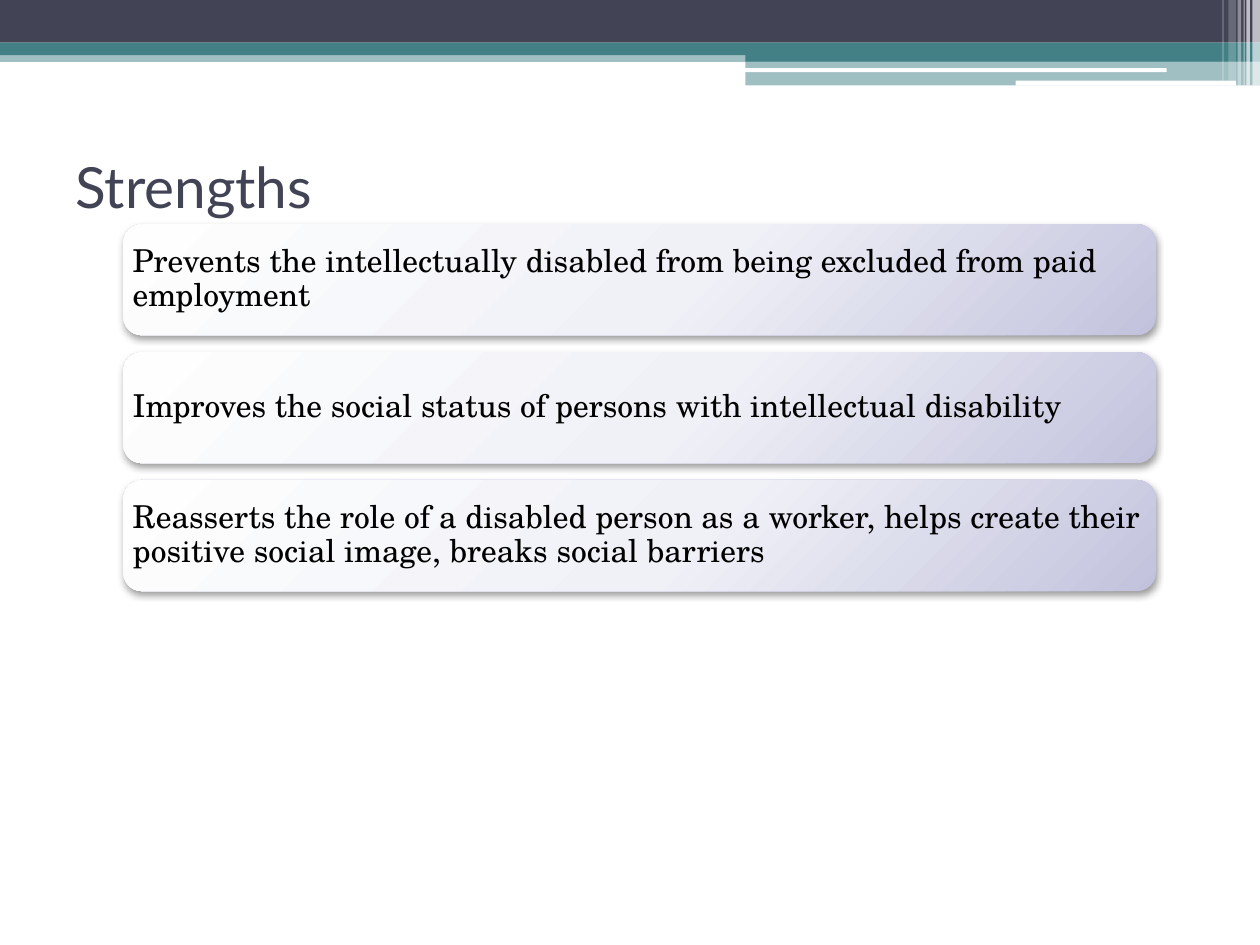
from pptx import Presentation
from pptx.dml.color import RGBColor
from pptx.enum.shapes import MSO_SHAPE
from pptx.enum.text import MSO_ANCHOR, PP_ALIGN
from pptx.oxml import parse_xml
from pptx.oxml.ns import nsdecls, qn
from pptx.util import Pt

COLORS = {
    "navy": "424456",
    "teal": "438086",
    "white": "FFFFFF",
    "black": "000000",
    "card_light": "FEFEFE",
    "card_middle": "F0F1F7",
    "card_dark": "C2C2DD",
}

# Header bands: left, top, width, height, colour, opacity in percent
BANDS = [
    (0, 28.8, 720, 6.6, "teal", 50),
    (0, 0, 720, 24.4, "navy", 100),
    (0, 24.4, 720, 7.2, "teal", 100),
    (426, 28, 294, 7.2, "teal", 100),
    (426, 35.2, 294, 13.6, "teal", 50),
]
# White rounded rules: left, top, width, height
RULES = [(425.5, 39, 241.2, 2.2), (580.3, 46.1, 126, 2.9)]
# White stripes at the right edge: left, width, height, opacity
STRIPES = [
    (715.7, 4.3, 49, 65),
    (712.2, 2, 49, 65),
    (710.6, 0.7, 49, 60),
    (707.2, 2, 49, 40),
    (702, 4.3, 46.1, 20),
    (698.5, 0.7, 46.1, 30),
]

STRENGTHS = [
    "Prevents the intellectually disabled from being excluded from paid employment",
    "Improves the social status of persons with intellectual disability",
    "Reasserts the role of a disabled person as a worker, helps create their "
    "positive social image, breaks social barriers",
]
CARD_LEFT, CARD_TOP, CARD_WIDTH, CARD_HEIGHT = 70.5, 128.1, 590, 63.5
CARD_PITCH = 73.1


def add_block(page, left, top, width, height, color, opacity=100,
              kind=MSO_SHAPE.RECTANGLE):
    block = page.shapes.add_shape(kind, Pt(left), Pt(top), Pt(width), Pt(height))
    block.shadow.inherit = False
    block.line.fill.background()
    block.fill.solid()
    block.fill.fore_color.rgb = RGBColor.from_string(COLORS[color])
    if opacity < 100:
        tint = block.element.spPr.find(".//" + qn("a:srgbClr"))
        tint.append(parse_xml(f'<a:alpha {nsdecls("a")} val="{opacity * 1000}"/>'))
    return block


def write_text(box, text, *, font, size, color, anchor, insets, line_spacing=1.0):
    frame = box.text_frame
    frame.word_wrap = True
    frame.vertical_anchor = anchor
    frame.margin_left = frame.margin_right = Pt(insets[0])
    frame.margin_top = frame.margin_bottom = Pt(insets[1])
    para = frame.paragraphs[0]
    para.alignment = PP_ALIGN.LEFT
    para.line_spacing = line_spacing
    span = para.add_run()
    span.text = text
    span.font.name = font
    span.font.size = Pt(size)
    span.font.color.rgb = RGBColor.from_string(COLORS[color])


def add_card_effects(card):
    """Give a card its radial gradient and a soft shadow below."""
    properties = card.element.spPr
    stops = "".join(
        f'<a:gs pos="{position * 1000}"><a:srgbClr val="{COLORS[name]}"/></a:gs>'
        for position, name in [(0, "card_light"), (55, "card_middle"), (100, "card_dark")]
    )
    gradient = parse_xml(
        f'<a:gradFill {nsdecls("a")} rotWithShape="1"><a:gsLst>{stops}</a:gsLst>'
        '<a:path path="circle">'
        '<a:fillToRect l="-40000" t="-90000" r="140000" b="190000"/>'
        '</a:path></a:gradFill>'
    )
    properties.replace(properties.find(qn("a:solidFill")), gradient)
    properties.find(qn("a:effectLst")).append(parse_xml(
        f'<a:outerShdw {nsdecls("a")} blurRad="{Pt(4.1)}" dist="{Pt(2)}" '
        'dir="5400000" rotWithShape="0">'
        f'<a:srgbClr val="{COLORS["black"]}"><a:alpha val="40000"/></a:srgbClr>'
        '</a:outerShdw>'
    ))


def add_header(page):
    for band in BANDS:
        add_block(page, *band)
    for rule in RULES:
        add_block(page, *rule, "white", kind=MSO_SHAPE.ROUNDED_RECTANGLE)
    for left, width, height, opacity in STRIPES:
        add_block(page, left, 0, width, height, "white", opacity)


def add_title(page, text):
    # The box ends above the first card, so the descenders stay clear
    box = page.shapes.add_textbox(Pt(36), Pt(84), Pt(648), Pt(43))
    write_text(box, text, font="Lato", size=32.4, color="navy",
               anchor=MSO_ANCHOR.TOP, insets=(7.2, 3))


def add_card(page, top, text):
    card = add_block(page, CARD_LEFT, top, CARD_WIDTH, CARD_HEIGHT, "card_light",
                     kind=MSO_SHAPE.ROUNDED_RECTANGLE)
    add_card_effects(card)
    write_text(card, text, font="TeX Gyre Schola", size=18, color="black",
               anchor=MSO_ANCHOR.MIDDLE, insets=(2.3, 2), line_spacing=0.9)


def main():
    deck = Presentation()
    deck.slide_width, deck.slide_height = Pt(720), Pt(540)
    page = deck.slides.add_slide(deck.slide_layouts[6])

    # Header decoration and title
    add_header(page)
    add_title(page, "Strengths")

    # Evenly spaced cards
    for index, text in enumerate(STRENGTHS):
        add_card(page, CARD_TOP + index * CARD_PITCH, text)

    deck.save("out.pptx")


if __name__ == "__main__":
    main()
